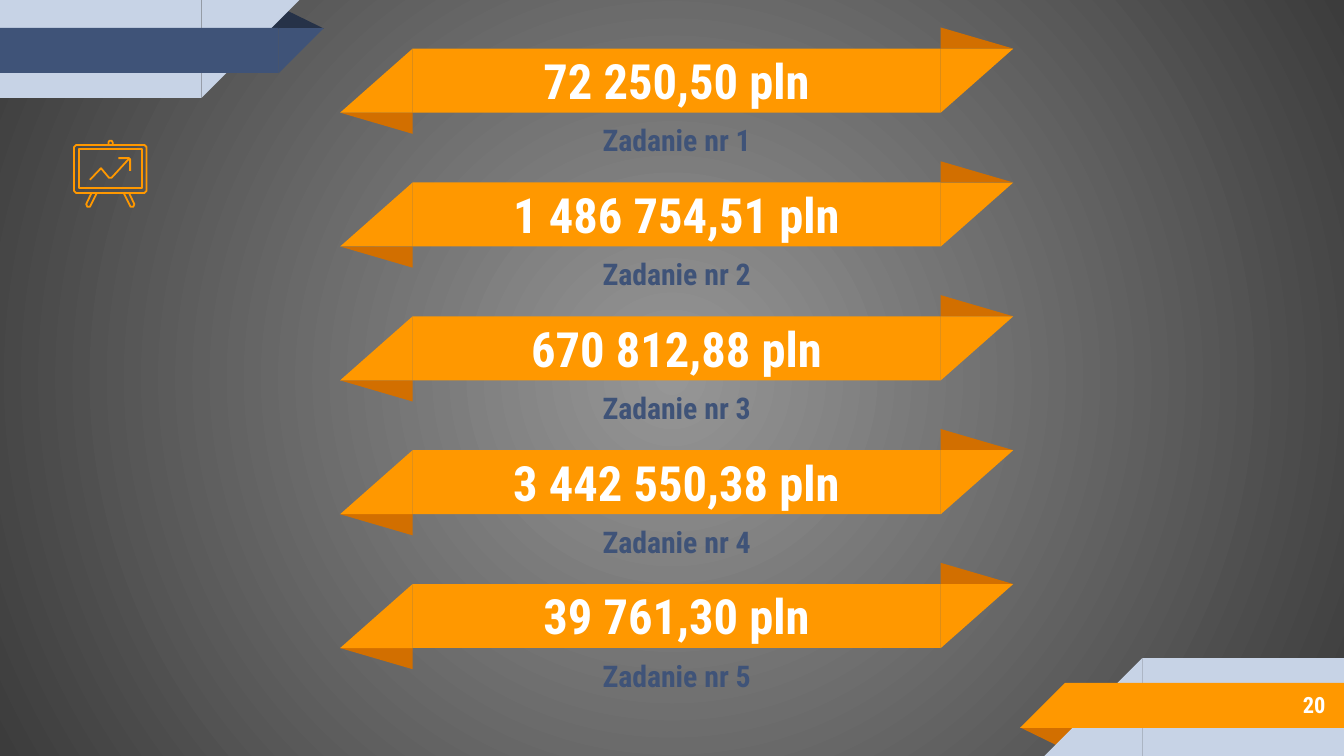
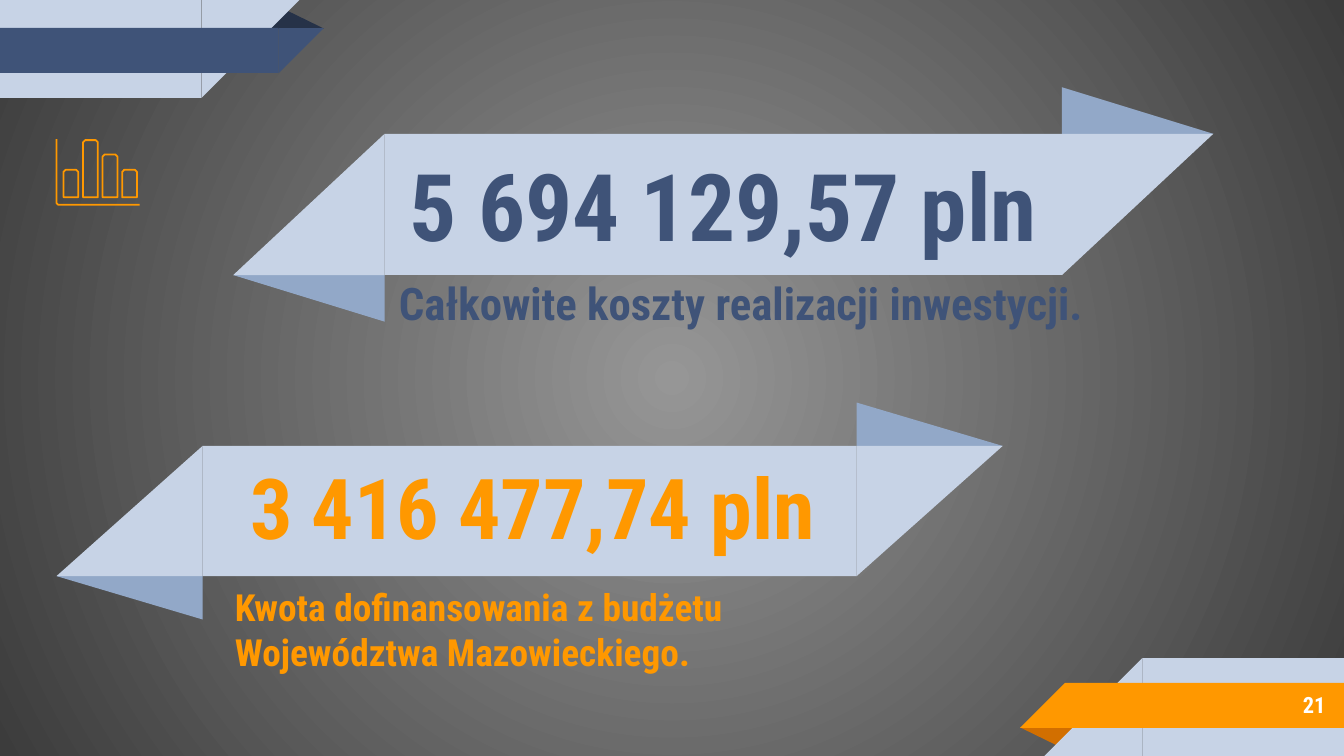
from dataclasses import dataclass
from typing import NamedTuple

from lxml.etree import SubElement
from pptx import Presentation
from pptx.dml.color import RGBColor
from pptx.enum.shapes import MSO_SHAPE
from pptx.enum.text import MSO_ANCHOR, PP_ALIGN
from pptx.oxml.ns import qn
from pptx.util import Cm, Pt

WIDTH, HEIGHT = 25.4, 14.29


@dataclass(frozen=True)
class Theme:
    """Colours, font and type sizes shared by the slides."""

    font: str = "Roboto Condensed"
    white: str = "FFFFFF"
    orange: str = "FF9800"
    rust: str = "D26F00"
    pale: str = "C7D3E6"
    steel: str = "92A8C8"
    navy: str = "3F5378"
    ink: str = "263248"
    glow: str = "969696"
    edge: str = "3C3C3C"
    number: int = 12
    task: int = 16
    grant: int = 20
    total: int = 24
    task_amount: int = 26
    grant_amount: int = 45
    total_amount: int = 50
    icon_line: float = 0.96


THEME = Theme()


class Box(NamedTuple):
    """A rectangle in centimetres."""

    left: float
    top: float
    width: float
    height: float

    def turned(self) -> "Box":
        """Return the rectangle turned half round the slide centre."""
        return Box(WIDTH - self.left - self.width, HEIGHT - self.top - self.height,
                   self.width, self.height)

    def lengths(self) -> list[Cm]:
        """Return the four measures as lengths."""
        return [Cm(value) for value in self]


class Label(NamedTuple):
    """A text with its place and look."""

    text: str
    box: Box
    size: int
    colour: str
    align: PP_ALIGN = PP_ALIGN.CENTER


@dataclass(frozen=True)
class Ribbon:
    """A slanted band with a fold at each end."""

    body: Box
    tail: float
    fold: float
    colour: str
    fold_colour: str


class Stroke(NamedTuple):
    """An outline through points in centimetres."""

    points: list[tuple[float, float]]
    closed: bool = False


def add_piece(shapes, kind: MSO_SHAPE, box: Box, colour: str, *,
              flip: bool = False, turn: bool = False, apex: float | None = None) -> None:
    """Add one plain filled piece of a ribbon or corner."""
    piece = shapes.add_shape(kind, *box.lengths())
    piece.shadow.inherit = False
    piece.fill.solid()
    piece.fill.fore_color.rgb = RGBColor.from_string(colour)
    piece.line.fill.background()
    if apex is not None:
        piece.adjustments[0] = apex
    if flip:
        piece.element.spPr.get_or_add_xfrm().set("flipH", "1")
    if turn:
        piece.rotation = 180


def add_corner(page, accent: str, fold_colour: str, at_bottom: bool) -> None:
    """Add the striped corner at top left, or turned at bottom right."""
    shapes = page.shapes.add_group_shape().shapes

    def place(box: Box) -> Box:
        return box.turned() if at_bottom else box

    add_piece(shapes, MSO_SHAPE.ISOSCELES_TRIANGLE, place(Box(5.03, 0.18, 1.09, 0.36)),
              fold_colour, turn=at_bottom, apex=0.324)
    for top, width, height, colour in ((0, 3.81, 1.85, THEME.pale),
                                       (0.53, 5.27, 0.85, accent)):
        add_piece(shapes, MSO_SHAPE.RECTANGLE, place(Box(0, top, width, height)), colour)
        add_piece(shapes, MSO_SHAPE.RIGHT_TRIANGLE, place(Box(width, top, height, height)),
                  colour, flip=True, turn=not at_bottom)


def add_ribbon(page, ribbon: Ribbon) -> None:
    """Add a ribbon as one group."""
    shapes = page.shapes.add_group_shape().shapes
    left, top, width, height = ribbon.body
    start, end = left - ribbon.tail, left + width
    add_piece(shapes, MSO_SHAPE.RECTANGLE, ribbon.body, ribbon.colour)
    for side, fold_top, is_right in ((end, top - ribbon.fold, True),
                                     (start, top + height, False)):
        add_piece(shapes, MSO_SHAPE.ISOSCELES_TRIANGLE,
                  Box(side, fold_top, ribbon.tail, ribbon.fold),
                  ribbon.fold_colour, turn=not is_right, apex=0)
        add_piece(shapes, MSO_SHAPE.RIGHT_TRIANGLE, Box(side, top, ribbon.tail, height),
                  ribbon.colour, flip=True, turn=is_right)


def add_label(page, label: Label) -> None:
    """Add a bold text box, one paragraph per line."""
    box = page.shapes.add_textbox(*label.box.lengths())
    frame = box.text_frame
    frame.word_wrap = True
    frame.vertical_anchor = MSO_ANCHOR.MIDDLE
    frame.margin_left = frame.margin_right = Cm(0.25)
    frame.margin_top = frame.margin_bottom = Cm(0.25)
    frame.text = label.text
    for para in frame.paragraphs:
        para.alignment = label.align
        for span in para.runs:
            span.font.name = THEME.font
            span.font.size = Pt(label.size)
            span.font.bold = True
            span.font.color.rgb = RGBColor.from_string(label.colour)


def add_icon(page, strokes: list[Stroke]) -> None:
    """Add a line icon as one group."""
    shapes = page.shapes.add_group_shape().shapes
    for stroke in strokes:
        first, *rest = [(Cm(x), Cm(y)) for x, y in stroke.points]
        builder = shapes.build_freeform(*first, scale=1.0)
        builder.add_line_segments(rest, close=stroke.closed)
        outline = builder.convert_to_shape()
        outline.shadow.inherit = False
        outline.fill.background()
        outline.line.color.rgb = RGBColor.from_string(THEME.orange)
        outline.line.width = Pt(THEME.icon_line)


def board_icon() -> list[Stroke]:
    """Return the strokes of a presentation board."""
    left, top, right, bottom, cut = 1.40, 2.74, 2.77, 3.65, 0.04
    frame = [(left + cut, top), (right - cut, top), (right, top + cut),
             (right, bottom - cut), (right - cut, bottom), (left + cut, bottom),
             (left, bottom - cut), (left, top + cut)]
    leg = [(1.73, 3.65), (1.63, 3.86), (1.65, 3.91), (1.70, 3.91), (1.83, 3.65)]
    return [
        Stroke(frame, True),
        Stroke([(2.13, 2.74), (2.13, 2.69), (2.11, 2.66), (2.07, 2.66),
                (2.05, 2.69), (2.05, 2.74)]),
        Stroke(leg),
        Stroke([(left + right - x, y) for x, y in leg]),
        Stroke([(1.50, 2.82), (1.50, 3.56), (2.69, 3.56), (2.69, 2.82)], True),
        Stroke([(2.44, 3.00), (2.11, 3.36), (2.06, 3.36), (1.91, 3.18), (1.70, 3.40)]),
        Stroke([(2.24, 2.99), (2.44, 2.99), (2.46, 3.01), (2.46, 3.23)]),
    ]


def bars_icon() -> list[Stroke]:
    """Return the strokes of a bar chart."""
    strokes = [Stroke([(1.07, 2.63), (1.07, 3.84), (1.10, 3.87), (2.64, 3.87)])]
    width, bottom, cut = 0.28, 3.73, 0.04
    for index, top in enumerate((3.21, 2.65, 2.92, 3.21)):
        left = 1.20 + 0.37 * index
        right = left + width
        strokes.append(Stroke([(right, bottom), (right, top + cut), (right - cut, top),
                               (left + cut, top), (left, top + cut), (left, bottom)], True))
    return strokes


def paint_background(page) -> None:
    """Fill the background with a glow from the centre."""
    fill = page.background.fill
    fill.gradient()
    for stop, colour in zip(fill.gradient_stops, (THEME.glow, THEME.edge)):
        stop.color.rgb = RGBColor.from_string(colour)
    linear = page.element.find(".//" + qn("a:lin"))
    gradient = linear.getparent()
    gradient.remove(linear)
    circle = SubElement(gradient, qn("a:path"), {"path": "circle"})
    SubElement(circle, qn("a:fillToRect"), dict.fromkeys("ltrb", "50000"))


def add_page(deck, number: int):
    """Add a slide with background, corners and number."""
    page = deck.slides.add_slide(deck.slide_layouts[6])
    paint_background(page)
    add_corner(page, THEME.orange, THEME.rust, at_bottom=True)
    add_corner(page, THEME.navy, THEME.ink, at_bottom=False)
    add_label(page, Label(str(number), Box(21.16, 12.88, 4.14, 0.89),
                          THEME.number, THEME.white, PP_ALIGN.RIGHT))
    return page


def build_tasks(deck) -> None:
    """Build the slide with the cost of each task."""
    page = add_page(deck, 20)
    amounts = ("72 250,50", "1 486 754,51", "670 812,88", "3 442 550,38", "39 761,30")
    left, width = 7.80, 9.98
    for index, amount in enumerate(amounts):
        top = 0.92 + 2.53 * index
        add_ribbon(page, Ribbon(Box(left, top, width, 1.21), 1.37, 0.40,
                                THEME.orange, THEME.rust))
        add_label(page, Label(f"{amount} pln", Box(left, top - 0.04, width, 1.27),
                              THEME.task_amount, THEME.white))
        add_label(page, Label(f"Zadanie nr {index + 1}", Box(left, top + 1.27, width, 0.91),
                              THEME.task, THEME.navy))
    add_icon(page, board_icon())


def build_totals(deck) -> None:
    """Build the slide with the total cost and the grant."""
    page = add_page(deck, 21)
    for ribbon in (
        Ribbon(Box(7.27, 2.53, 12.80, 2.67), 2.86, 0.88, THEME.pale, THEME.steel),
        Ribbon(Box(3.83, 8.43, 12.36, 2.46), 2.76, 0.82, THEME.pale, THEME.steel),
    ):
        add_ribbon(page, ribbon)
    for label in (
        Label("5 694 129,57 pln", Box(7.27, 2.16, 12.82, 3.40),
              THEME.total_amount, THEME.navy),
        Label("Całkowite koszty realizacji inwestycji.", Box(7.29, 5.18, 13.92, 1.07),
              THEME.total, THEME.navy, PP_ALIGN.LEFT),
        Label("3 416 477,74 pln", Box(3.96, 7.87, 12.22, 3.40),
              THEME.grant_amount, THEME.orange),
        Label("Kwota dofinansowania z budżetu\nWojewództwa Mazowieckiego.",
              Box(4.19, 10.90, 12.01, 1.98), THEME.grant, THEME.orange, PP_ALIGN.LEFT),
    ):
        add_label(page, label)
    add_icon(page, bars_icon())


def main() -> None:
    """Build and save the deck."""
    deck = Presentation()
    deck.slide_width, deck.slide_height = Cm(WIDTH), Cm(HEIGHT)
    build_tasks(deck)
    build_totals(deck)
    deck.save("out.pptx")


if __name__ == "__main__":
    main()
